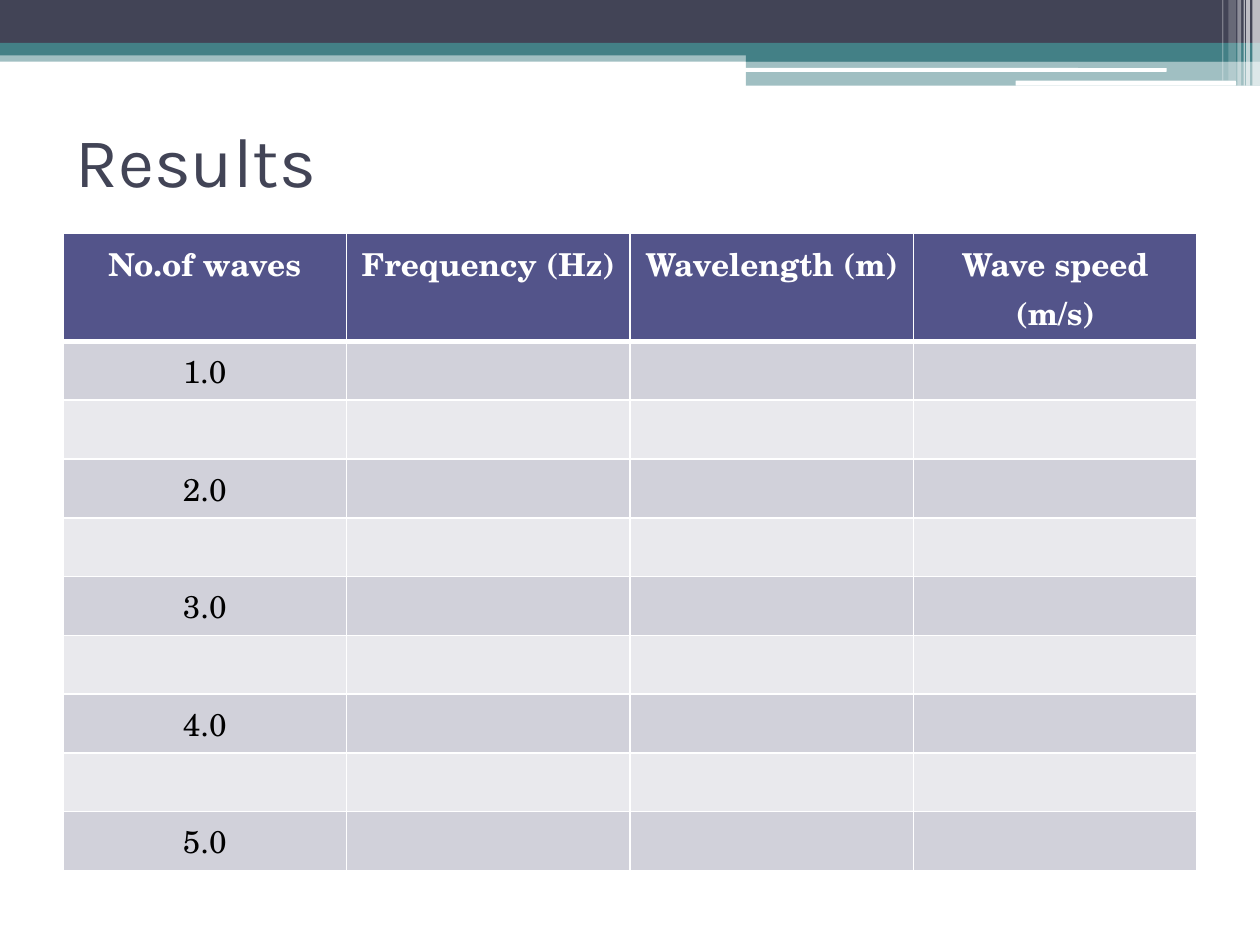
from dataclasses import dataclass

from pptx import Presentation
from pptx import util as u
from pptx.dml.color import RGBColor
from pptx.enum import shapes, text
from pptx.oxml import parse_xml
from pptx.oxml.ns import nsdecls, qn

Inches, Pt = u.Inches, u.Pt


@dataclass(frozen=True)
class Theme:
    navy: str = "424456"
    teal: str = "438086"
    white: str = "FFFFFF"
    black: str = "000000"
    head: str = "53548A"
    bands: tuple = ("D1D1DA", "E9E9ED")
    title_font: str = "Karla"
    body_font: str = "TeX Gyre Schola"
    title_size: int = 40
    body_size: int = 18


THEME = Theme()


def add_run(para, words, font, size, color, bold=False):
    run = para.add_run()
    run.text = words
    run.font.name = font
    run.font.size = Pt(size)
    run.font.bold = bold
    run.font.color.rgb = RGBColor.from_string(color)


def add_bar(slide, box, color, alpha=100, rounded=False):
    kind = shapes.MSO_SHAPE.ROUNDED_RECTANGLE if rounded else shapes.MSO_SHAPE.RECTANGLE
    bar = slide.shapes.add_shape(kind, *map(Inches, box))
    bar.shadow.inherit = False
    bar.line.fill.background()
    bar.fill.solid()
    bar.fill.fore_color.rgb = RGBColor.from_string(color)
    if alpha < 100:
        tint = bar.fill._xPr.find(qn("a:solidFill"))[0]
        tint.append(parse_xml(f'<a:alpha {nsdecls("a")} val="{alpha * 1000}"/>'))


def add_banner(slide, box):
    left, top, width, _ = box
    right = left + width

    # Full-width bands
    add_bar(slide, (left, top + 0.4, width, 0.09), THEME.teal, 50)
    add_bar(slide, (left, top, width, 0.34), THEME.navy)
    add_bar(slide, (left, top + 0.34, width, 0.1), THEME.teal)

    # Step on the right, with its white lines
    step = right - 4.08
    add_bar(slide, (step, top + 0.39, 4.08, 0.1), THEME.teal)
    add_bar(slide, (step, top + 0.48, 4.08, 0.2), THEME.teal, 50)
    add_bar(slide, (step - 0.01, top + 0.54, 3.35, 0.03), THEME.white, rounded=True)
    add_bar(slide, (right - 1.94, top + 0.64, 1.75, 0.04), THEME.white, rounded=True)

    # Pale stripes at the corner: gap from the right edge, width, height, opacity
    stripes = ((0.06, 0.06, 0.68, 65), (0.11, 0.03, 0.68, 65), (0.13, 0.01, 0.68, 60),
               (0.18, 0.03, 0.68, 40), (0.25, 0.06, 0.64, 20), (0.3, 0.01, 0.64, 30))
    for gap, wide, high, alpha in stripes:
        add_bar(slide, (right - gap, top, wide, high), THEME.white, alpha)


def add_title(slide, box, words):
    frame = slide.shapes.add_textbox(*map(Inches, box)).text_frame
    frame.word_wrap = True
    frame.vertical_anchor = text.MSO_ANCHOR.MIDDLE
    add_run(frame.paragraphs[0], words, THEME.title_font, THEME.title_size, THEME.navy)


def set_edges(cell, top, bottom):
    props = cell._tc.get_or_add_tcPr()
    for spot, (side, wide) in enumerate((("L", 1), ("R", 1), ("T", top), ("B", bottom))):
        props.insert(spot, parse_xml(
            f'<a:ln{side} {nsdecls("a")} w="{Pt(wide)}"><a:solidFill>'
            f'<a:srgbClr val="{THEME.white}"/></a:solidFill></a:ln{side}>'))


def add_grid(slide, box, rows, head_high):
    left, top, width, height = box
    count = len(rows[0])
    table = slide.shapes.add_table(len(rows), count, *map(Inches, box)).table
    for col in table.columns:
        col.width = Inches(width / count)
    row_high = (height - head_high) / (len(rows) - 1)

    for i, row in enumerate(rows):
        is_head = i == 0
        table.rows[i].height = Inches(head_high if is_head else row_high)
        fill = THEME.head if is_head else THEME.bands[(i - 1) % 2]
        color = THEME.white if is_head else THEME.black
        for j, words in enumerate(row):
            cell = table.cell(i, j)
            cell.fill.solid()
            cell.fill.fore_color.rgb = RGBColor.from_string(fill)
            set_edges(cell, top=3 if i == 1 else 1, bottom=3 if is_head else 1)
            para = cell.text_frame.paragraphs[0]
            para.alignment = text.PP_ALIGN.CENTER
            if words:
                add_run(para, words, THEME.body_font, THEME.body_size, color, is_head)
            else:
                para.font.size = Pt(THEME.body_size)


def main():
    deck = Presentation()
    deck.slide_width, deck.slide_height = Inches(10), Inches(7.5)
    slide = deck.slides.add_slide(deck.slide_layouts[6])

    # Wave counts stand on every other row
    heads = ["No.of waves", "Frequency (Hz)", "Wavelength (m)", "Wave speed (m/s)"]
    body = [[f"{n // 2 + 1}.0" if n % 2 == 0 else "", "", "", ""] for n in range(9)]

    add_banner(slide, (0, 0, 10, 0.68))
    add_title(slide, (0.5, 0.68, 9, 1.17), "Results")
    add_grid(slide, (0.5, 1.85, 9, 5.06), [heads] + body, head_high=0.86)
    deck.save("out.pptx")


if __name__ == "__main__":
    main()
